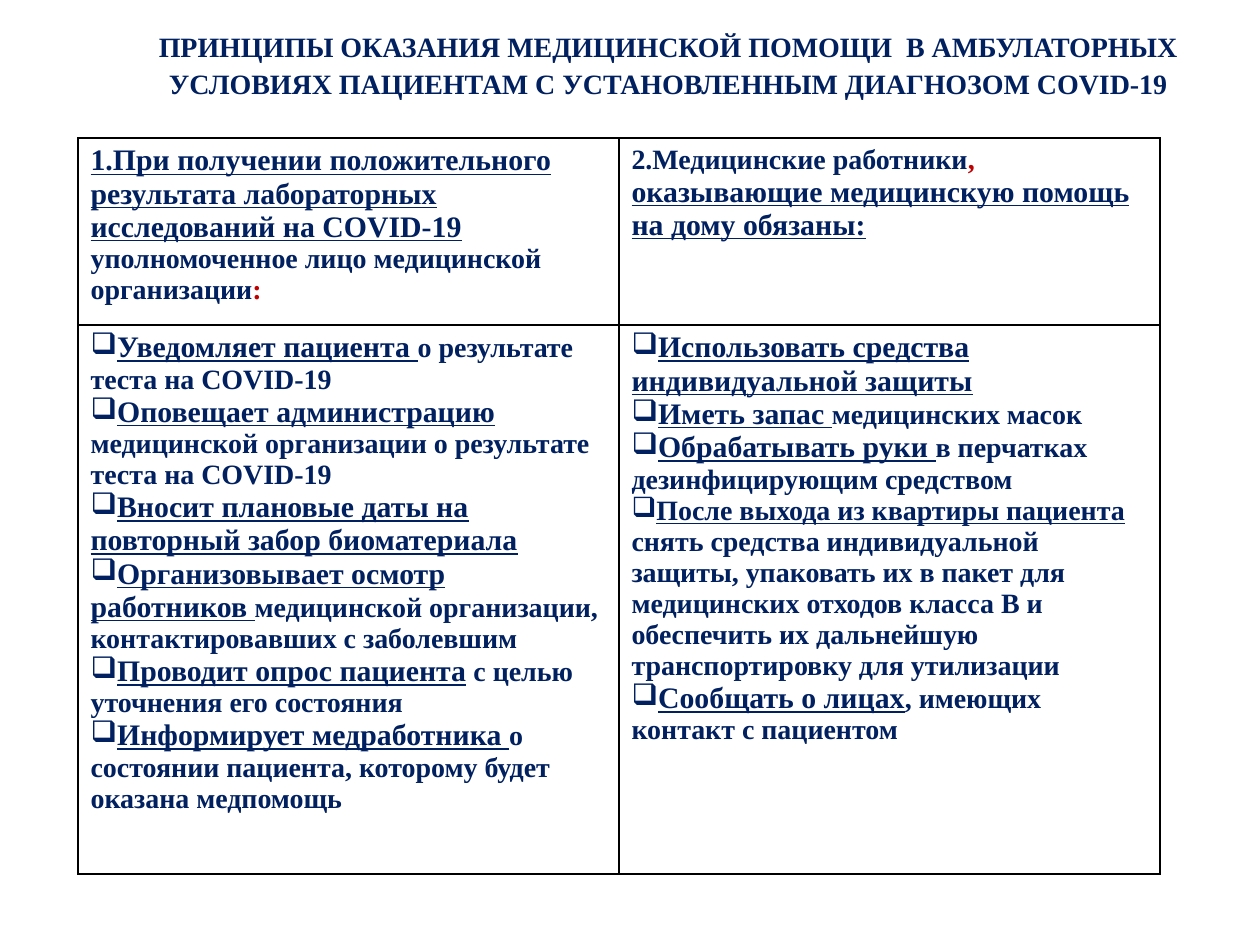
from lxml import etree
from pptx import Presentation
from pptx import util as u
from pptx.dml.color import RGBColor
from pptx.enum import text
from pptx.oxml.ns import qn

PX = 914400 // 126
FONT = "Times New Roman"
COLORS = {"navy": "002060", "red": "C00000", "line": "000000"}

# Run styles: size, underline, colour
STYLES = {
    "key": (17, True, "navy"),
    "key_small": (16, True, "navy"),
    "plain": (16, False, "navy"),
    "mark": (16, False, "red"),
}

TITLE = ("ПРИНЦИПЫ ОКАЗАНИЯ МЕДИЦИНСКОЙ ПОМОЩИ  В АМБУЛАТОРНЫХ "
         "УСЛОВИЯХ ПАЦИЕНТАМ С УСТАНОВЛЕННЫМ ДИАГНОЗОМ COVID-19")

# One list of paragraphs per cell, each paragraph a list of (style, text)
HEADINGS = [
    [[("key", "1.При получении положительного результата лабораторных "
              "исследований на COVID-19 "),
      ("plain", "уполномоченное лицо медицинской организации"),
      ("mark", ":")]],
    [[("plain", "2.Медицинские работники"),
      ("mark", ", "),
      ("key", "оказывающие медицинскую помощь на дому обязаны:")]],
]
DUTIES = [
    [[("key", "Уведомляет пациента "),
      ("plain", "о результате теста на COVID-19")],
     [("key", "Оповещает администрацию "),
      ("plain", "медицинской организации о результате теста на COVID-19")],
     [("key", "Вносит плановые даты на повторный забор биоматериала")],
     [("key", "Организовывает осмотр работников "),
      ("plain", "медицинской организации, контактировавших с заболевшим")],
     [("key", "Проводит опрос пациента"),
      ("plain", " с целью уточнения его состояния")],
     [("key", "Информирует медработника "),
      ("plain", "о состоянии пациента, которому будет оказана медпомощь")]],
    [[("key", "Использовать средства индивидуальной защиты")],
     [("key", "Иметь запас "), ("plain", "медицинских масок")],
     [("key", "Обрабатывать руки "),
      ("plain", "в перчатках дезинфицирующим средством")],
     [("key_small", "После выхода из квартиры пациента "),
      ("plain", "снять средства индивидуальной защиты, упаковать их в пакет "
                "для медицинских отходов класса B и обеспечить их дальнейшую "
                "транспортировку для утилизации")],
     [("key", "Сообщать о лицах"),
      ("plain", ", имеющих контакт с пациентом")]],
]


def format_run(r, style):
    size, underline, color = STYLES[style]
    r.font.name = FONT
    r.font.size = u.Pt(size)
    r.font.bold = True
    r.font.underline = underline
    r.font.color.rgb = RGBColor.from_string(COLORS[color])


def add_borders(cell):
    tc_pr = cell._tc.get_or_add_tcPr()
    for side in ("lnL", "lnR", "lnT", "lnB"):
        ln = etree.SubElement(tc_pr, qn(f"a:{side}"), w=str(u.Pt(1)))
        fill = etree.SubElement(ln, qn("a:solidFill"))
        etree.SubElement(fill, qn("a:srgbClr"), val=COLORS["line"])


prs = Presentation()
prs.slide_width, prs.slide_height = u.Inches(10), u.Inches(7.5)
s = prs.slides.add_slide(prs.slide_layouts[5])

# Title
title = s.shapes.title
title.left, title.top, title.width, title.height = (
    v * PX for v in (137, 20, 1063, 81))
tf = title.text_frame
tf.text = TITLE
tf.word_wrap = True
tf.auto_size = text.MSO_AUTO_SIZE.NONE
tf.vertical_anchor = text.MSO_ANCHOR.TOP
p = tf.paragraphs[0]
p.alignment = text.PP_ALIGN.CENTER
p.line_spacing = 1.1
format_run(p.runs[0], "plain")

# Table
col_width, row_heights = 541, (187, 549)
table = s.shapes.add_table(2, 2, 78 * PX, 138 * PX, 2 * col_width * PX,
                           sum(row_heights) * PX).table
table.first_row = table.horz_banding = False
for col in table.columns:
    col.width = col_width * PX
for row, height in zip(table.rows, row_heights):
    row.height = height * PX

# Cells: headings above, bulleted duties below
for i, row_cells in enumerate((HEADINGS, DUTIES)):
    for j, paragraphs in enumerate(row_cells):
        cell = table.cell(i, j)
        add_borders(cell)
        cell.fill.background()
        tf = cell.text_frame
        for n, runs in enumerate(paragraphs):
            p = tf.add_paragraph() if n else tf.paragraphs[0]
            if i == 1:
                p_pr = p._p.get_or_add_pPr()
                p_pr.set("marL", "0")
                p_pr.set("indent", "0")
                etree.SubElement(p_pr, qn("a:buChar"), char="❑")
            for style, words in runs:
                r = p.add_run()
                r.text = words
                format_run(r, style)

prs.save("out.pptx")
